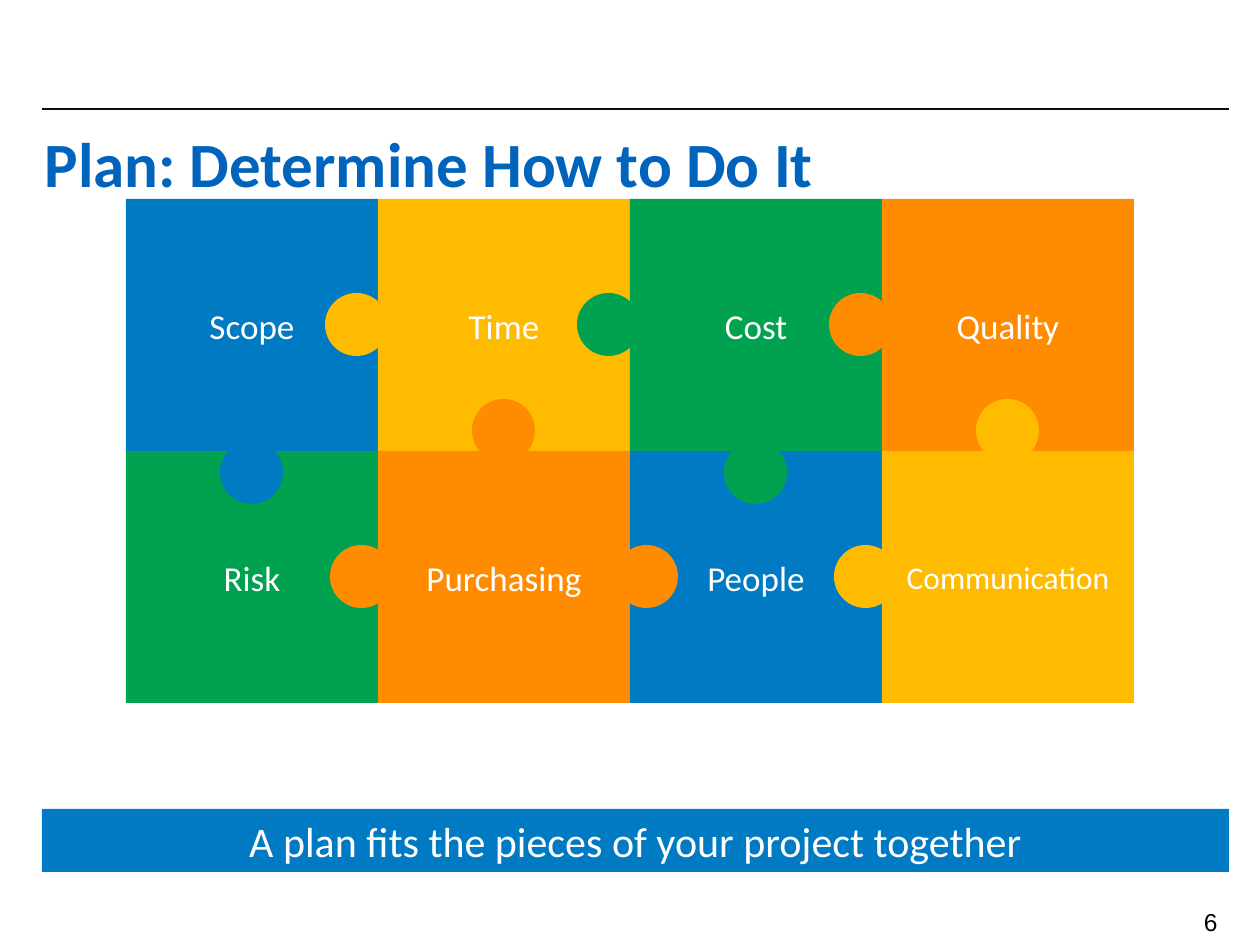
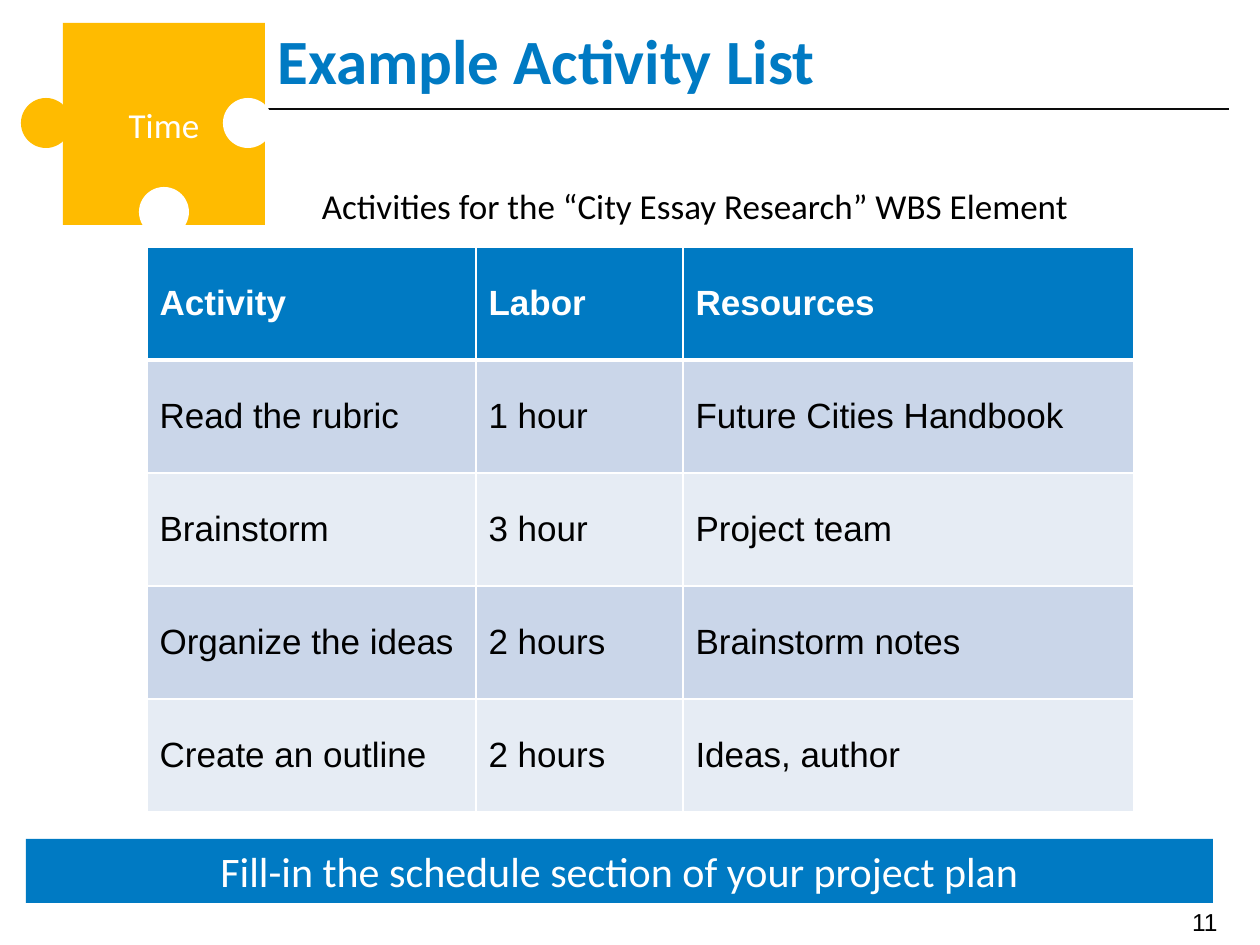
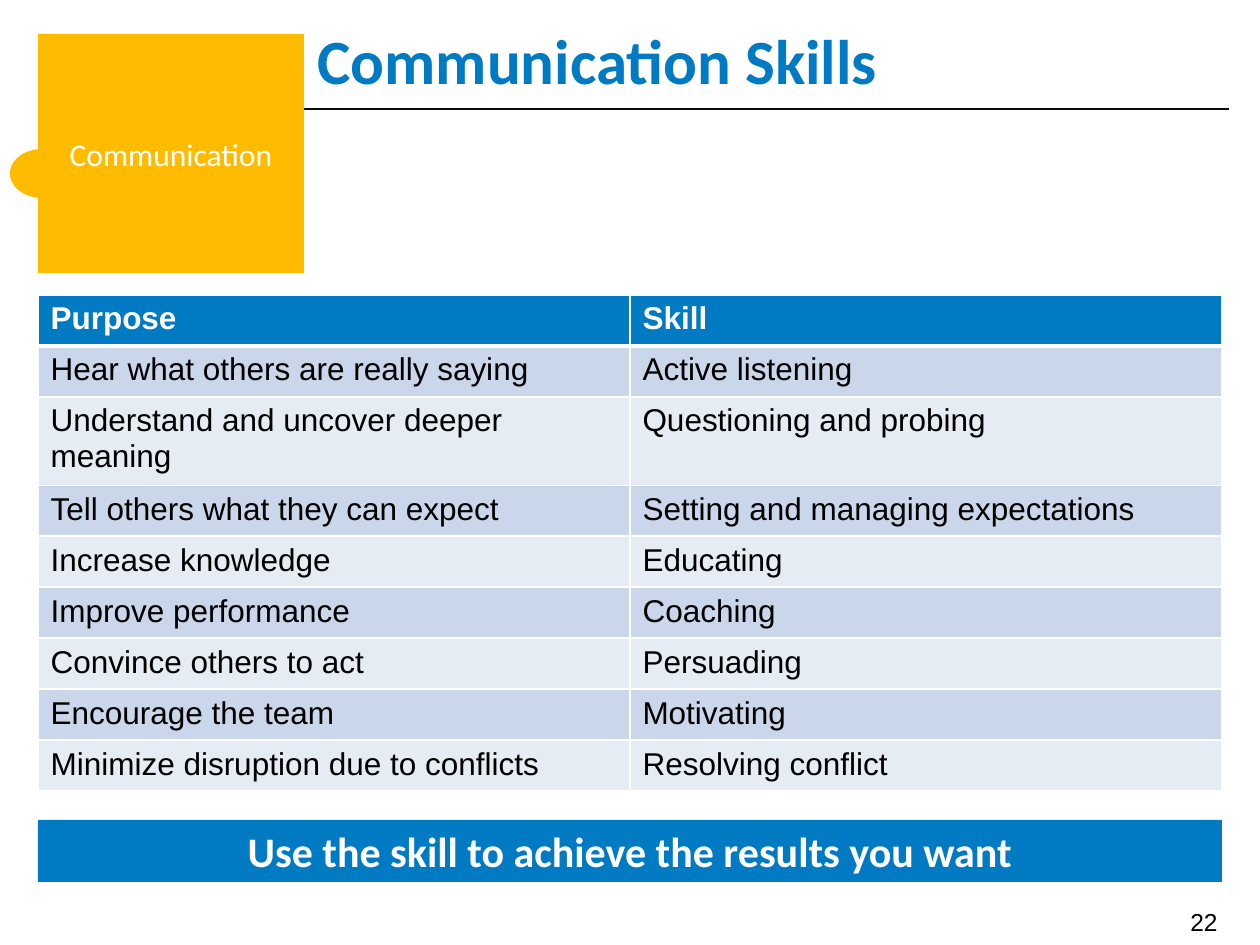
import lxml.etree
import pptx
import pptx.dml.color
import pptx.enum.shapes
import pptx.enum.text
import pptx.oxml.ns
import pptx.util

EMU_PER_PX = 914400 / 126
SLIDE_WIDTH, SLIDE_HEIGHT = 1260, 945

BLUE, TITLE_BLUE = "007AC3", "0064BC"
GREEN, ORANGE, YELLOW = "00A250", "FF8C00", "FFBB00"
WHITE, BLACK, RULE_COLOR = "FFFFFF", "000000", "0C0C0C"
ROW_FILLS = ("CAD6E9", "E6ECF4")
HEADING_FONT, BODY_FONT = "Calibri", "Arial"

RECTANGLE = pptx.enum.shapes.MSO_SHAPE.RECTANGLE
OVAL = pptx.enum.shapes.MSO_SHAPE.OVAL
MIDDLE = pptx.enum.text.MSO_ANCHOR.MIDDLE
TOP = pptx.enum.text.MSO_ANCHOR.TOP
LEFT = pptx.enum.text.PP_ALIGN.LEFT
CENTER = pptx.enum.text.PP_ALIGN.CENTER
RIGHT = pptx.enum.text.PP_ALIGN.RIGHT


def px(length):
    return pptx.util.Emu(round(length * EMU_PER_PX))


def rgb(color):
    return pptx.dml.color.RGBColor.from_string(color)


def write_text(frame, text, size=20, color=WHITE, font=HEADING_FONT,
               bold=False, align=CENTER):
    paragraph = frame.paragraphs[0]
    paragraph.text = text
    paragraph.alignment = align
    paragraph.font.name = font
    paragraph.font.size = pptx.util.Pt(size)
    paragraph.font.bold = bold
    paragraph.font.color.rgb = rgb(color)


def add_block(slide, kind, left, top, width, height, color, text="", **text_format):
    shape = slide.shapes.add_shape(kind, px(left), px(top), px(width), px(height))
    shape.shadow.inherit = False
    shape.fill.solid()
    shape.fill.fore_color.rgb = rgb(color)
    shape.line.fill.background()
    if text:
        shape.text_frame.word_wrap = True
        shape.text_frame.vertical_anchor = MIDDLE
        write_text(shape.text_frame, text, **text_format)


def add_label(slide, left, top, width, height, text, **text_format):
    box = slide.shapes.add_textbox(px(left), px(top), px(width), px(height))
    box.text_frame.word_wrap = True
    write_text(box.text_frame, text, **text_format)


def add_rule(slide):
    rule = slide.shapes.add_connector(
        pptx.enum.shapes.MSO_CONNECTOR.STRAIGHT, px(42), px(109), px(1229), px(109))
    rule.line.color.rgb = rgb(RULE_COLOR)
    rule.line.width = pptx.util.Pt(0.75)
    properties = rule._element.spPr
    lxml.etree.SubElement(properties, pptx.oxml.ns.qn("a:effectLst"))


def add_titled_slide(presentation, title, number, left, top, color=BLUE):
    """Slide with its title, the rule across the page and the page number."""
    slide = presentation.slides.add_slide(presentation.slide_layouts[5])
    add_rule(slide)
    add_label(slide, 1089, 901, 141, 43, str(number), size=14,
              color=BLACK, font=BODY_FONT, align=RIGHT)
    shape = slide.shapes.title
    shape.left, shape.top = px(left), px(top)
    shape.width, shape.height = px(1229 - left), px(98)
    shape.text_frame.auto_size = pptx.enum.text.MSO_AUTO_SIZE.NONE
    shape.text_frame.vertical_anchor = MIDDLE
    write_text(shape.text_frame, title, size=36, color=color, bold=True, align=LEFT)
    return slide


def add_banner(slide, left, top, width, height, text, bold=False):
    add_block(slide, RECTANGLE, left, top, width, height, BLUE, text, size=24, bold=bold)


def add_piece(slide, left, top, side, color, text, size, knob_side, knobs):
    """Square puzzle piece; each knob is (x, y, color) measured from its corner."""
    add_block(slide, RECTANGLE, left, top, side, side, color, text, size=size)
    for x, y, knob_color in knobs:
        add_block(slide, OVAL, left + x, top + y, knob_side, knob_side, knob_color)


def set_borders(cell, top_width, bottom_width):
    properties = cell._tc.get_or_add_tcPr()
    widths = {"a:lnL": 1, "a:lnR": 1, "a:lnT": top_width, "a:lnB": bottom_width}
    for tag, width in widths.items():
        line = lxml.etree.SubElement(properties, pptx.oxml.ns.qn(tag),
                                     w=str(pptx.util.Pt(width)))
        fill = lxml.etree.SubElement(line, pptx.oxml.ns.qn("a:solidFill"))
        lxml.etree.SubElement(fill, pptx.oxml.ns.qn("a:srgbClr"), val=WHITE)


def add_grid(slide, left, top, column_widths, row_height, rows, size, anchor):
    frame = slide.shapes.add_table(
        len(rows), len(column_widths), px(left), px(top),
        px(sum(column_widths)), px(row_height * len(rows)))
    table = frame.table
    for column, width in zip(table.columns, column_widths):
        column.width = px(width)
    for row_index, texts in enumerate(rows):
        table.rows[row_index].height = px(row_height)
        header = row_index == 0
        for column_index, text in enumerate(texts):
            cell = table.cell(row_index, column_index)
            set_borders(cell, 3 if row_index == 1 else 1, 3 if header else 1)
            cell.fill.solid()
            cell.fill.fore_color.rgb = rgb(BLUE if header else ROW_FILLS[(row_index - 1) % 2])
            cell.vertical_anchor = anchor
            write_text(cell.text_frame, text, size=size, font=BODY_FONT, bold=header,
                       color=WHITE if header else BLACK, align=LEFT)


def build_plan_slide(presentation):
    slide = add_titled_slide(presentation, "Plan: Determine How to Do It", 6,
                             32, 113, TITLE_BLUE)
    add_banner(slide, 42, 809, 1187, 63, "A plan fits the pieces of your project together")

    # Puzzle pieces, back to front: label, column, row, color, size, knobs
    side, knob_side = 252, 63
    upper_left, lower_left = (-53, 94), (-48, 94)
    lower_right, above, below = (237, 94), (94, -52), (94, 242)
    pieces = (
        ("Risk", 0, 1, GREEN, 20, ()),
        ("Scope", 0, 0, BLUE, 20, (below,)),
        ("People", 2, 1, BLUE, 20, ()),
        ("Time", 1, 0, YELLOW, 20, (upper_left,)),
        ("Purchasing", 1, 1, ORANGE, 20, (above, lower_left, lower_right)),
        ("Cost", 2, 0, GREEN, 20, (upper_left, below)),
        ("Quality", 3, 0, ORANGE, 20, (upper_left,)),
        ("Communication", 3, 1, YELLOW, 18, (above, lower_left)),
    )
    for text, column, row, color, size, knobs in pieces:
        add_piece(slide, 126 + column * side, 199 + row * side, side, color, text, size,
                  knob_side, [(x, y, color) for x, y in knobs])


def build_activity_slide(presentation):
    slide = add_titled_slide(presentation, "Example Activity List", 11, 265, 10)
    add_banner(slide, 26, 839, 1187, 64, "Fill-in the schedule section of your project plan")
    add_piece(slide, 63, 23, 202, YELLOW, "Time", 20, 50,
              [(-42, 75, YELLOW), (76, 164, WHITE), (160, 75, WHITE)])
    add_label(slide, 252, 178, 886, 55,
              "Activities for the “City Essay Research” WBS Element", color=BLACK)
    rows = (
        ("Activity", "Labor", "Resources"),
        ("Read the rubric", "1 hour", "Future Cities Handbook"),
        ("Brainstorm", "3 hour", "Project team"),
        ("Organize the ideas", "2 hours", "Brainstorm notes"),
        ("Create an outline", "2 hours", "Ideas, author"),
    )
    add_grid(slide, 147, 247, (329, 207, 451), 113, rows, 20, MIDDLE)


def build_skills_slide(presentation):
    slide = add_titled_slide(presentation, "Communication Skills", 22, 305, 10)
    rows = (
        ("Purpose", "Skill"),
        ("Hear what others are really saying", "Active listening"),
        ("Understand and uncover deeper meaning", "Questioning and probing"),
        ("Tell others what they can expect", "Setting and managing expectations"),
        ("Increase knowledge", "Educating"),
        ("Improve performance", "Coaching"),
        ("Convince others to act", "Persuading"),
        ("Encourage the team", "Motivating"),
        ("Minimize disruption due to conflicts", "Resolving conflict"),
    )
    add_grid(slide, 38, 295, (592, 592), 51, rows, 18, TOP)
    add_banner(slide, 38, 820, 1184, 62,
               "Use the skill to achieve the results you want", bold=True)

    # Stretched puzzle piece
    add_block(slide, RECTANGLE, 38, 34, 266, 239, YELLOW, "Communication", size=18)
    add_block(slide, OVAL, 10, 149, 64, 49, YELLOW)


def main():
    presentation = pptx.Presentation()
    presentation.slide_width = px(SLIDE_WIDTH)
    presentation.slide_height = px(SLIDE_HEIGHT)
    build_plan_slide(presentation)
    build_activity_slide(presentation)
    build_skills_slide(presentation)
    presentation.save("out.pptx")


if __name__ == "__main__":
    main()
